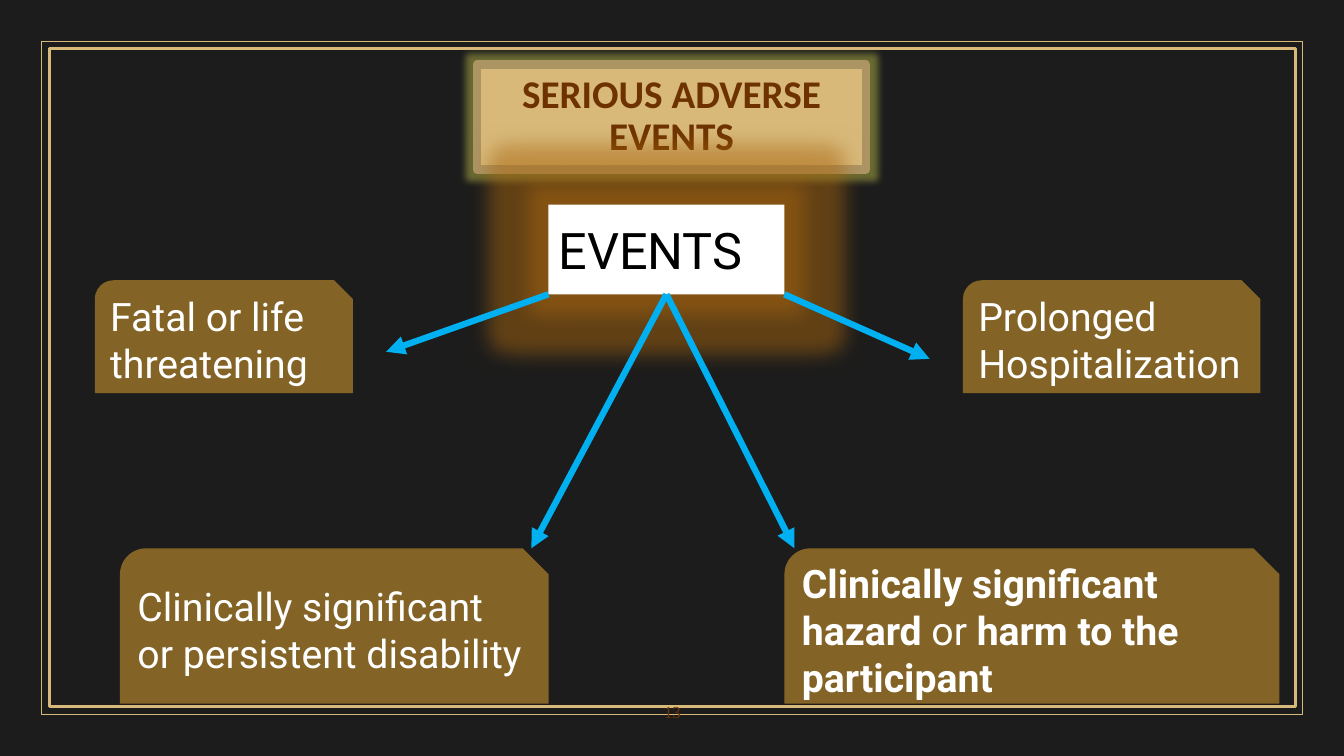
from lxml import etree
from pptx import Presentation
from pptx.dml.color import RGBColor
from pptx.enum.shapes import MSO_CONNECTOR, MSO_SHAPE
from pptx.enum.text import MSO_ANCHOR, MSO_AUTO_SIZE, PP_ALIGN
from pptx.oxml.ns import qn
from pptx.util import Inches, Pt

RECTANGLE = MSO_SHAPE.RECTANGLE
CARD = MSO_SHAPE.SNIP_ROUND_RECTANGLE
STRAIGHT = MSO_CONNECTOR.STRAIGHT
MIDDLE = MSO_ANCHOR.MIDDLE
NO_AUTOFIT = MSO_AUTO_SIZE.NONE
LEFT, CENTER = PP_ALIGN.LEFT, PP_ALIGN.CENTER
BOTTOM_SITE = 2

COLORS = {
    "background": "1C1C1C", "gold": "D8B97A", "dark gold": "AC9463",
    "brown": "6D3200", "card": "836426", "arrow": "00B0F0",
    "white": "FFFFFF", "black": "000000",
    "title glow": "B8B84A", "events glow": "A8660F",
}

# left, top, width, height, line width in points
FRAMES = [(0.41, 0.41, 12.51, 6.68, 0.75), (0.49, 0.48, 12.36, 6.53, 2)]
TITLE = ("SERIOUS ADVERSE EVENTS", (4.73, 0.64, 3.86, 1.04))
PAGE_NUMBER = ("13", (6.37, 6.86, 0.6, 0.4))
EVENTS = ("EVENTS", (5.44, 2.03, 2.34, 0.89))

# box and runs (text, bold)
CARDS = [
    ((0.94, 2.78, 2.56, 1.12), [("Fatal or life threatening", False)]),
    ((1.19, 5.44, 4.25, 1.54),
     [("Clinically significant or persistent disability", False)]),
    ((7.78, 5.44, 4.91, 1.54),
     [("Clinically significant hazard ", True), ("or ", False),
      ("harm to the participant", True)]),
    ((9.55, 2.78, 2.95, 1.12), [("Prolonged Hospitalization", False)]),
]

# start as a fraction of the events box's bottom edge, then arrow tip
ARROWS = [(0, (3.83, 3.49)), (0.5, (5.27, 5.44)),
          (0.5, (7.88, 5.44)), (1, (9.22, 3.56))]


def color(name):
    return RGBColor.from_string(COLORS[name])


def inches(values):
    return [Inches(value) for value in values]


def write(shape, runs, size, font, color_name, alignment=LEFT):
    frame = shape.text_frame
    frame.word_wrap = True
    frame.auto_size = NO_AUTOFIT
    frame.vertical_anchor = MIDDLE
    paragraph = frame.paragraphs[0]
    paragraph.alignment = alignment
    for text, bold in runs:
        run = paragraph.add_run()
        run.text = text
        run.font.size = Pt(size)
        run.font.name = font
        run.font.bold = bold
        run.font.color.rgb = color(color_name)


def fill_shape(shape, color_name):
    shape.fill.solid()
    shape.fill.fore_color.rgb = color(color_name)


def outline(shape, color_name, width):
    shape.line.color.rgb = color(color_name)
    shape.line.width = Pt(width)


def add_box(slide, preset, box, fill_name):
    shape = slide.shapes.add_shape(preset, *inches(box))
    shape.shadow.inherit = False
    fill_shape(shape, fill_name)
    shape.line.fill.background()
    return shape


def add_glow(shape, color_name, radius, opacity):
    shape.shadow.inherit = False
    effects = shape._element.spPr.find(qn("a:effectLst"))
    glow = etree.SubElement(effects, qn("a:glow"), rad=str(Inches(radius)))
    tint = etree.SubElement(glow, qn("a:srgbClr"), val=COLORS[color_name])
    etree.SubElement(tint, qn("a:alpha"), val=str(opacity * 1000))


def add_arrow(slide, start, tip):
    arrow = slide.shapes.add_connector(STRAIGHT, *inches(start + tip))
    outline(arrow, "arrow", 4.5)
    etree.SubElement(arrow.line._get_or_add_ln(), qn("a:tailEnd"), type="triangle")
    etree.SubElement(arrow._element.spPr, qn("a:effectLst"))
    return arrow


def main():
    presentation = Presentation()
    presentation.slide_width, presentation.slide_height = inches((13.33, 7.5))
    slide = presentation.slides.add_slide(presentation.slide_layouts[5])
    slide.background.fill.solid()
    slide.background.fill.fore_color.rgb = color("background")

    title_text, title_box = TITLE
    title = slide.shapes.title
    title.left, title.top, title.width, title.height = inches(title_box)
    fill_shape(title, "gold")
    outline(title, "dark gold", 6)
    add_glow(title, "title glow", 0.14, 50)
    write(title, [(title_text, True)], 28, "Calibri", "brown", CENTER)
    title.text_frame.paragraphs[0].line_spacing = 0.9

    for *box, width in FRAMES:
        frame = add_box(slide, RECTANGLE, box, "background")
        frame.fill.background()
        outline(frame, "gold", width)

    number_text, number_box = PAGE_NUMBER
    number = slide.shapes.add_textbox(*inches(number_box))
    write(number, [(number_text, False)], 12, "Times New Roman", "brown", CENTER)

    events_text, events_box = EVENTS
    events = add_box(slide, RECTANGLE, events_box, "white")
    add_glow(events, "events glow", 0.4, 50)
    write(events, [(events_text, False)], 36, "Roboto", "black")

    for box, runs in CARDS:
        write(add_box(slide, CARD, box, "card"), runs, 28, "Roboto", "white")

    left, top, width, height = events_box
    for fraction, tip in ARROWS:
        arrow = add_arrow(slide, (left + fraction * width, top + height), tip)
        if fraction == 0.5:
            arrow.begin_connect(events, BOTTOM_SITE)

    presentation.save("out.pptx")


if __name__ == "__main__":
    main()
